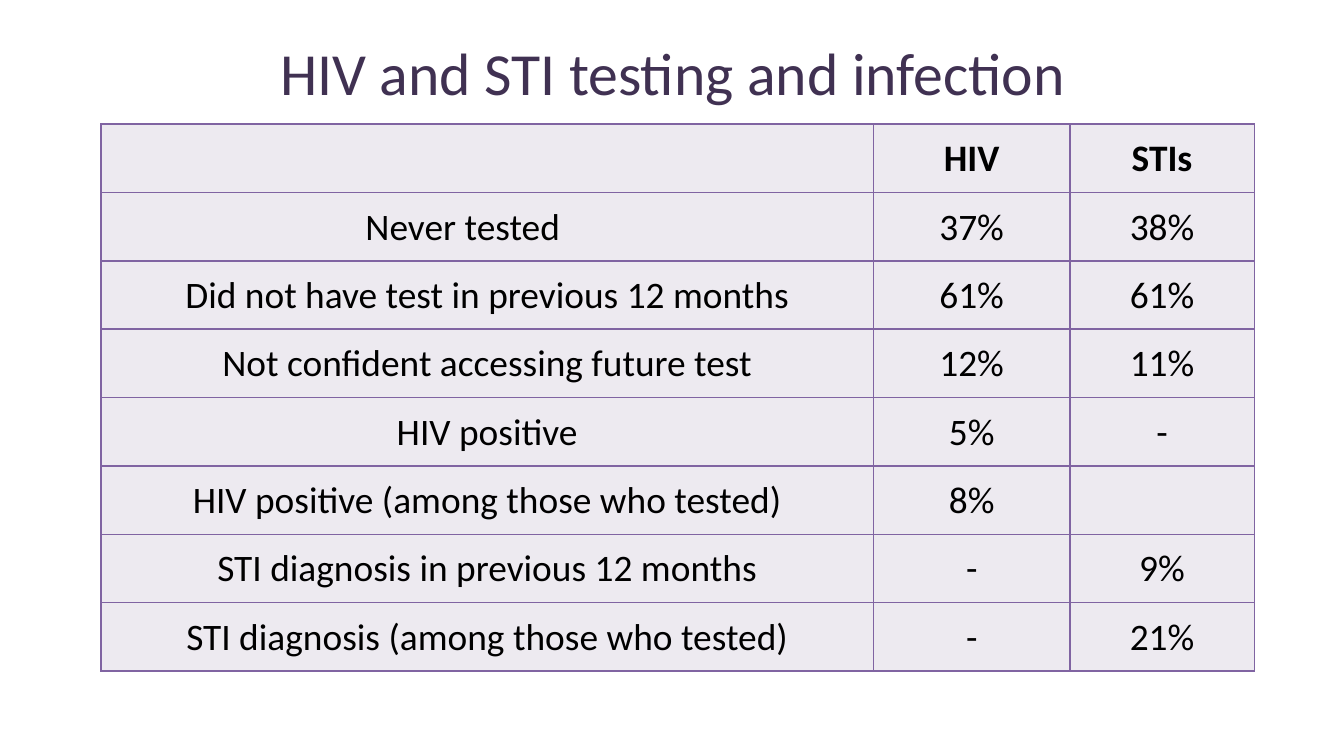
import dataclasses

import lxml.etree
import pptx
import pptx.dml.color
import pptx.enum.text
import pptx.oxml.ns
import pptx.util

Pt = pptx.util.Pt
CENTER = pptx.enum.text.PP_ALIGN.CENTER
MIDDLE = pptx.enum.text.MSO_ANCHOR.MIDDLE


@dataclasses.dataclass(frozen=True)
class Theme:
    font: str = "Calibri"
    title_size: int = 32
    cell_size: int = 20
    title_color: str = "403152"
    text_color: str = "000000"
    cell_fill: str = "EDEAF0"
    border_color: str = "8064A2"
    border_width: int = 1


THEME = Theme()

TITLE = "HIV and STI testing and infection"
ROWS = [
    ("", "HIV", "STIs"),
    ("Never tested", "37%", "38%"),
    ("Did not have test in previous 12 months", "61%", "61%"),
    ("Not confident accessing future test", "12%", "11%"),
    ("HIV positive", "5%", "-"),
    ("HIV positive (among those who tested)", "8%", ""),
    ("STI diagnosis in previous 12 months", "-", "9%"),
    ("STI diagnosis (among those who tested)", "-", "21%"),
]
COLUMN_SHARES = (0.67, 0.17, 0.16)
INDENTED_ROW = 1  # its label sits left of the column's centre
LABEL_INDENT = 27


def write_text(text_frame, text, size, color, bold=False):
    text_frame.text = text
    paragraph = text_frame.paragraphs[0]
    paragraph.alignment = CENTER
    for run in paragraph.runs:
        run.font.name = THEME.font
        run.font.size = Pt(size)
        run.font.bold = bold
        run.font.color.rgb = pptx.dml.color.RGBColor.from_string(color)


def add_borders(cell):
    properties = cell._tc.get_or_add_tcPr()
    qn = pptx.oxml.ns.qn
    for side in ("a:lnL", "a:lnR", "a:lnT", "a:lnB"):
        line = lxml.etree.SubElement(
            properties, qn(side), w=str(Pt(THEME.border_width)))
        fill = lxml.etree.SubElement(line, qn("a:solidFill"))
        lxml.etree.SubElement(fill, qn("a:srgbClr"), val=THEME.border_color)


def add_title(slide, left, top, width, height):
    title = slide.shapes.title
    title.left, title.top = Pt(left), Pt(top)
    title.width, title.height = Pt(width), Pt(height)
    title.text_frame.vertical_anchor = MIDDLE
    write_text(title.text_frame, TITLE, THEME.title_size, THEME.title_color)


def add_results_table(slide, left, top, width, height):
    table = slide.shapes.add_table(
        len(ROWS), len(COLUMN_SHARES),
        Pt(left), Pt(top), Pt(width), Pt(height)).table
    table.horz_banding = False
    for column, share in zip(table.columns, COLUMN_SHARES):
        column.width = Pt(width * share)
    for row in table.rows:
        row.height = Pt(height / len(ROWS))

    for row_index, values in enumerate(ROWS):
        for column_index, value in enumerate(values):
            cell = table.cell(row_index, column_index)
            add_borders(cell)
            cell.fill.solid()
            cell.fill.fore_color.rgb = pptx.dml.color.RGBColor.from_string(
                THEME.cell_fill)
            cell.vertical_anchor = MIDDLE
            cell.margin_left = cell.margin_right = cell.margin_top = Pt(0.75)
            cell.margin_bottom = 0
            write_text(cell.text_frame, value, THEME.cell_size,
                       THEME.text_color, bold=row_index == 0)
    table.cell(INDENTED_ROW, 0).margin_right = Pt(LABEL_INDENT)


def main():
    presentation = pptx.Presentation()
    presentation.slide_width, presentation.slide_height = Pt(720), Pt(405)
    title_only = presentation.slide_layouts[5]
    slide = presentation.slides.add_slide(title_only)
    add_title(slide, 36.5, 4.5, 648, 67.5)
    add_results_table(slide, 54, 66.5, 618, 293)
    presentation.save("out.pptx")


if __name__ == "__main__":
    main()
